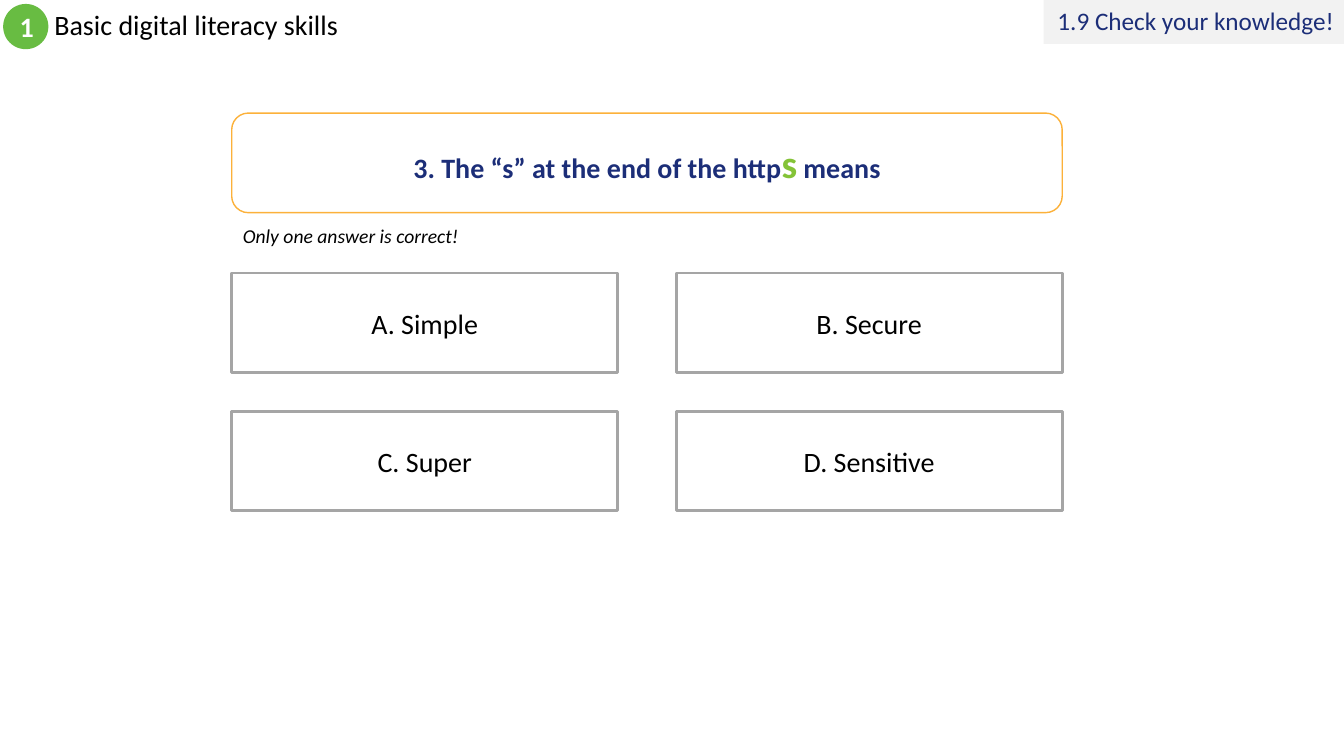
from pptx import Presentation
from pptx.dml.color import RGBColor
from pptx.enum.shapes import MSO_SHAPE
from pptx.enum.text import MSO_ANCHOR, PP_ALIGN
from pptx.util import Cm, Pt

COLORS = {
    "black": "000000",
    "white": "FFFFFF",
    "navy": "1C2E78",
    "badge": "68BC42",
    "lime": "84C337",
    "orange": "FCB13A",
    "gray": "A5A5A5",
    "pale": "F2F2F2",
}
BASE = {"name": "Calibri", "size": Pt(20), "bold": False, "italic": False}


def rgb(key):
    return RGBColor.from_string(COLORS[key])


def write(sp, runs, align=PP_ALIGN.CENTER, anchor=MSO_ANCHOR.MIDDLE, spacing=None):
    tf = sp.text_frame
    for name, value in {"word_wrap": True, "vertical_anchor": anchor}.items():
        setattr(tf, name, value)
    p = tf.paragraphs[0]
    for name, value in {"alignment": align, "line_spacing": spacing}.items():
        setattr(p, name, value)
    for text, color, fmt in runs:
        r = p.add_run()
        r.text = text
        for name, value in {**BASE, **fmt}.items():
            setattr(r.font, name, value)
        r.font.color.rgb = rgb(color)


def add_box(s, kind, box, fill, line=None, width=1):
    sp = s.shapes.add_shape(kind, *map(Cm, box))
    sp.shadow.inherit = False
    sp.fill.solid()
    sp.fill.fore_color.rgb = rgb(fill)
    if line:
        sp.line.color.rgb = rgb(line)
        sp.line.width = Pt(width)
    else:
        sp.line.fill.background()
    return sp


def add_label(s, box, runs, **layout):
    sp = s.shapes.add_textbox(*map(Cm, box))
    write(sp, runs, align=PP_ALIGN.LEFT, **layout)


def add_header(s, box, number, title, section):
    x, y, w, h = box
    badge, tab = 1.14, 7.57
    add_label(s, (x + 1.12, y + 0.1, 20.32, badge), [(title, "black", {})], spacing=0.9)
    sp = add_box(s, MSO_SHAPE.OVAL, (x + 0.08, y + 0.1, badge, badge), "badge")
    write(sp, [(number, "white", {"bold": True})])
    sp = add_box(s, MSO_SHAPE.RECTANGLE, (x + w - tab, y, tab, h), "pale")
    write(sp, [(section, "navy", {"size": Pt(18)})], align=PP_ALIGN.RIGHT, spacing=0.9)


def add_question(s, box, runs, hint):
    x, y, w, h = box
    sp = add_box(s, MSO_SHAPE.ROUNDED_RECTANGLE, box, "white", "orange")
    write(sp, runs)
    add_label(s, (x + 0.03, y + h + 0.15, 6, 0.86),
              [(hint, "black", {"size": Pt(14), "italic": True})], anchor=MSO_ANCHOR.TOP)


def add_answers(s, box, answers, cols=2, gap_x=1.47, gap_y=0.97):
    x, y, w, h = box
    rows = len(answers) // cols
    cell_w = (w - gap_x * (cols - 1)) / cols
    cell_h = (h - gap_y * (rows - 1)) / rows
    for i, answer in enumerate(answers):
        row, col = divmod(i, cols)
        cell = (x + col * (cell_w + gap_x), y + row * (cell_h + gap_y), cell_w, cell_h)
        sp = add_box(s, MSO_SHAPE.RECTANGLE, cell, "white", "gray", 2)
        write(sp, [(answer, "black", {})])


def main():
    prs = Presentation()
    prs.slide_width, prs.slide_height = Cm(33.87), Cm(19.05)
    s = prs.slides.add_slide(prs.slide_layouts[6])
    add_header(s, (0, 0, 33.87, 1.11), "1", "Basic digital literacy skills",
               "1.9 Check your knowledge!")
    bold = {"bold": True}
    question = [
        ("3. The “s” at the end of the http", "navy", bold),
        ("s", "lime", {**bold, "size": Pt(28)}),
        (" means", "navy", bold),
    ]
    add_question(s, (5.84, 2.85, 20.93, 2.51), question, "Only one answer is correct!")
    add_answers(s, (5.84, 6.88, 20.93, 5.99),
                ["A. Simple", "B. Secure", "C. Super", "D. Sensitive"])
    prs.save("out.pptx")


if __name__ == "__main__":
    main()
